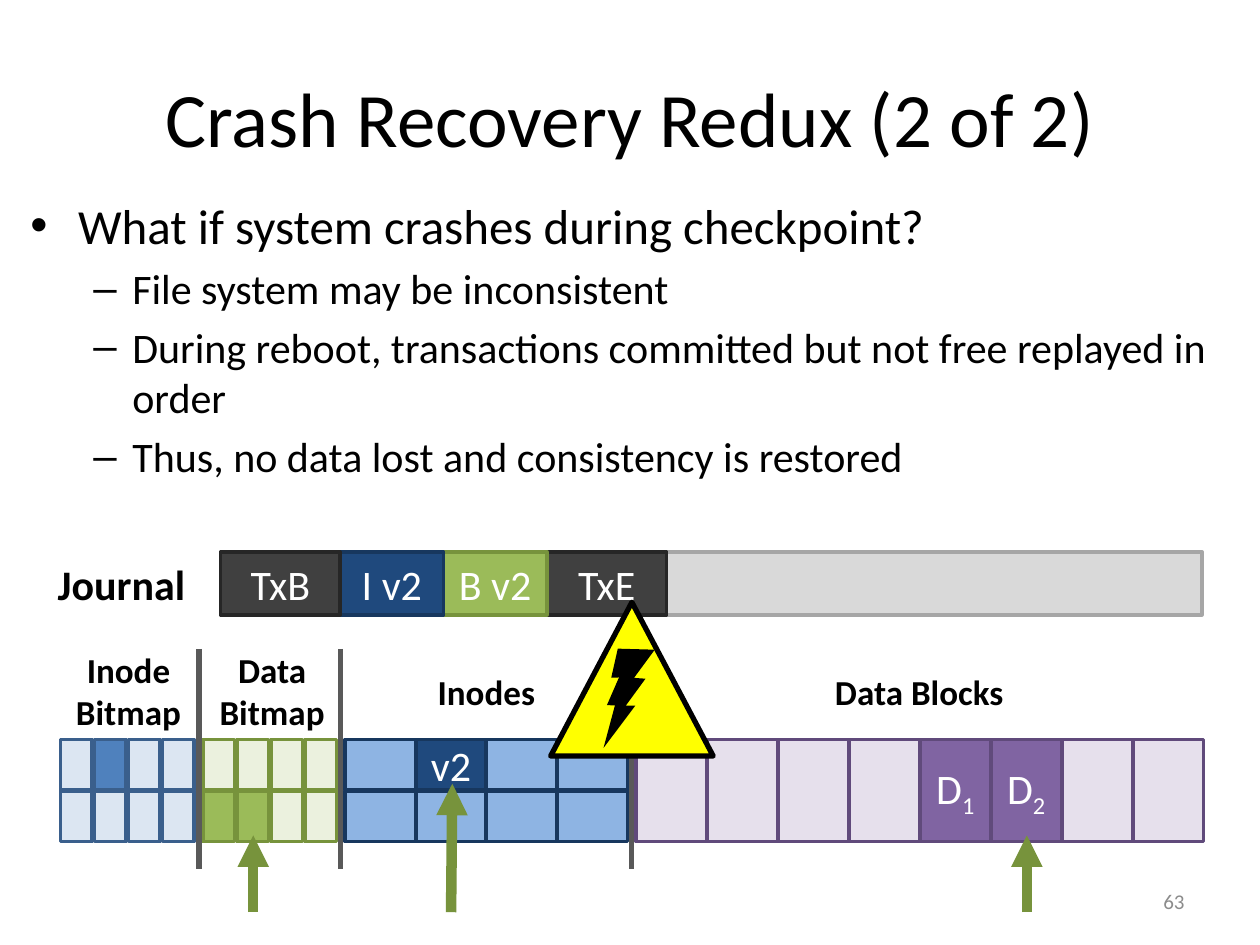
from pptx import Presentation
from pptx.dml.color import RGBColor
from pptx.enum.shapes import MSO_CONNECTOR, MSO_SHAPE
from pptx.enum.text import MSO_ANCHOR, PP_ALIGN
from pptx.oxml.ns import qn
from pptx.util import Inches, Pt
from lxml import etree

RECT, TRIANGLE, BOLT = MSO_SHAPE.RECTANGLE, MSO_SHAPE.ISOSCELES_TRIANGLE, MSO_SHAPE.LIGHTNING_BOLT
LEFT, CENTER, RIGHT = PP_ALIGN.LEFT, PP_ALIGN.CENTER, PP_ALIGN.RIGHT
TOP, MIDDLE = MSO_ANCHOR.TOP, MSO_ANCHOR.MIDDLE

# Content
TITLE = "Crash Recovery Redux (2 of 2)"
BULLETS = [
    (0, "What if system crashes during checkpoint?"),
    (1, "File system may be inconsistent"),
    (1, "During reboot, transactions committed but not free replayed in order"),
    (1, "Thus, no data lost and consistency is restored"),
]
JOURNAL = [  # text, width, fill, line
    ("TxB", 0.95, "404040", "262626"),
    ("I v2", 0.82, "1F497D", "17375E"),
    ("B v2", 0.82, "9BBB59", "77933C"),
    ("TxE", 0.95, "404040", "262626"),
    ("", 4.25, "D9D9D9", "A6A6A6"),
]
# Disk regions; "used" maps (row, column) to the text of a filled cell
REGIONS = [
    dict(left=0.48, columns=4, rows=2, step=0.27, width=0.25, fill="DCE6F2",
         used_fill="4F81BD", line="3A5F8C", used={(0, 1): ""}),
    dict(left=1.61, columns=4, rows=2, step=0.27, width=0.25, fill="EBF1DE",
         used_fill="9BBB59", line="77933C", used={(1, 0): "", (1, 1): ""}),
    dict(left=2.74, columns=4, rows=2, step=0.56, width=0.56, fill="8EB4E3",
         used_fill="1F497D", line="17375E", used={(0, 1): "v2"}),
    dict(left=5.05, columns=8, rows=1, step=0.563, width=0.56, fill="E6E0EC",
         used_fill="8064A2", line="604A7B", used={(0, 4): "D_1", (0, 5): "D_2"}),
]
LABELS = [  # lines, left, top, width, height
    (["Inode", "Bitmap"], 0.5, 5.1, 1.04, 0.77),
    (["Data", "Bitmap"], 1.64, 5.1, 1.04, 0.77),
    (["Inodes"], 3.37, 5.27, 0.98, 0.44),
    (["Data Blocks"], 6.52, 5.27, 1.55, 0.44),
]
DIVIDERS = [1.58, 2.7, 5.01]
ARROWS = [(3.58, 3.59, 6.22), (2.01, 2.01, 6.63), (8.15, 8.15, 6.63)]  # foot x, tip x, tip y
JOURNAL_LEFT, JOURNAL_TOP, JOURNAL_HEIGHT = 1.75, 4.38, 0.5
DISK_TOP, DISK_HEIGHT, ROW_GAP = 5.87, 0.81, 0.01


def color(value):
    return RGBColor.from_string(value)


def place(shape, *lengths):
    for name, length in zip(("left", "top", "width", "height"), lengths):
        setattr(shape, name, Inches(length))


def write(frame, lines, size, ink, align=CENTER, bold=False):
    """Fill a text frame; "D_1" gives a D with a subscript 1."""
    for index, line in enumerate(lines):
        para = frame.paragraphs[0] if index == 0 else frame.add_paragraph()
        para.alignment = align
        for part, text in enumerate(line.split("_")):
            span = para.add_run()
            span.text = text
            for name, value in dict(name="Calibri", size=Pt(size), bold=bold).items():
                setattr(span.font, name, value)
            span.font.color.rgb = color(ink)
            if part:
                span.font._element.set("baseline", "-25000")


def add_shape(kind, lengths, fill, line=None, weight=2, text=""):
    shape = page.shapes.add_shape(kind, *map(Inches, lengths))
    shape.shadow.inherit = False
    shape.fill.solid()
    shape.fill.fore_color.rgb = color(fill)
    if line:
        shape.line.color.rgb = color(line)
        shape.line.width = Pt(weight)
    else:
        shape.line.fill.background()
    if text:
        frame = shape.text_frame
        settings = dict(margin_left=0, margin_right=0, margin_top=0, margin_bottom=0,
                        vertical_anchor=MIDDLE, word_wrap=False)
        for name, value in settings.items():
            setattr(frame, name, value)
        write(frame, [text], 24, "FFFFFF")
    return shape


def add_text(lines, lengths, size, ink="000000", align=CENTER, bold=True, anchor=TOP):
    box = page.shapes.add_textbox(*map(Inches, lengths))
    box.text_frame.word_wrap = False
    box.text_frame.vertical_anchor = anchor
    write(box.text_frame, lines, size, ink, align, bold)


def add_line(start, end, ink, weight, arrow=False):
    line = page.shapes.add_connector(MSO_CONNECTOR.STRAIGHT, *map(Inches, start + end))
    line.line.color.rgb = color(ink)
    line.line.width = Pt(weight)
    if arrow:
        etree.SubElement(line.line._get_or_add_ln(), qn("a:tailEnd"), type="triangle")
    etree.SubElement(line._element.spPr, qn("a:effectLst"))


deck = Presentation()
deck.slide_width, deck.slide_height = Inches(10), Inches(7.5)
page = deck.slides.add_slide(deck.slide_layouts[1])  # title and bulleted body

# Title and bullets
title, body = page.shapes.title, page.placeholders[1]
place(title, 0.5, 0.3, 9, 1.25)
title.text_frame.vertical_anchor = MIDDLE
write(title.text_frame, [TITLE], 44, "000000")
place(body, 0.14, 1.5, 9.76, 5.42)
for index, (level, text) in enumerate(BULLETS):
    para = body.text_frame.paragraphs[0] if index == 0 else body.text_frame.add_paragraph()
    para.level = level
    span = para.add_run()
    span.text = text
    span.font.size = Pt(24 if level else 28)
    span.font.name = "Calibri"
    span.font.color.rgb = color("000000")
    for name, value in (("marL", 0.81 if level else 0.38), ("indent", -0.31 if level else -0.38)):
        para._p.get_or_add_pPr().set(name, str(Inches(value)))
add_text(["63"], (7.17, 6.95, 2.33, 0.4), 12, "8C8C8C", RIGHT, False, MIDDLE)

# Journal, drawn from the free space back to the first block
add_text(["Journal"], (0.36, JOURNAL_TOP, 1.22, JOURNAL_HEIGHT), 24, align=LEFT)
right = JOURNAL_LEFT + sum(width for _, width, _, _ in JOURNAL)
for text, width, fill, line in reversed(JOURNAL):
    right -= width
    add_shape(RECT, (right, JOURNAL_TOP, width, JOURNAL_HEIGHT), fill, line, text=text)

# Disk regions
for region in REGIONS:
    row_step = (DISK_HEIGHT + ROW_GAP) / region["rows"]
    for row in range(region["rows"]):
        for column in range(region["columns"]):
            used = (row, column) in region["used"]
            lengths = (region["left"] + column * region["step"], DISK_TOP + row * row_step,
                       region["width"], row_step - ROW_GAP)
            add_shape(RECT, lengths, region["used_fill" if used else "fill"], region["line"],
                      text=region["used"].get((row, column), ""))
for lines, *lengths in LABELS:
    add_text(lines, lengths, 20)
for x in DIVIDERS:
    add_line((x, 5.15), (x, 6.9), "595959", 3)

# Checkpoint writes
for foot, tip, top in ARROWS:
    add_line((foot, 7.24), (tip, top), "77933C", 6, arrow=True)

# Crash sign
add_shape(TRIANGLE, (4.37, 4.78, 1.29, 1.22), "FFFF00", "000000", 3)
bolt = add_shape(BOLT, (4.63, 5.15, 0.68, 0.68), "000000")
bolt.rotation = 336.9
bolt._element.spPr.xfrm.set("flipH", "1")

deck.save("out.pptx")
